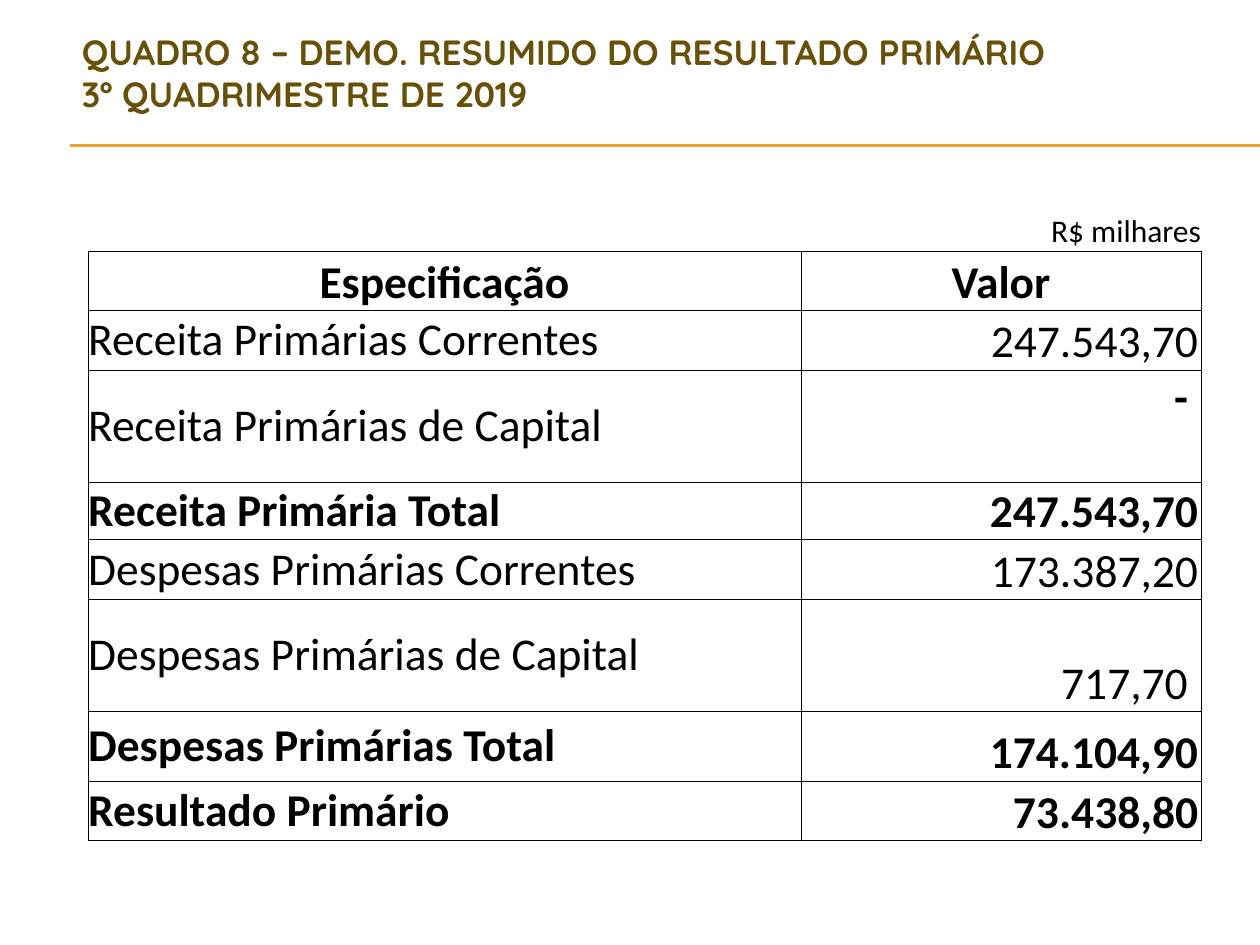
import pptx
import pptx.dml.color
import pptx.enum.shapes
import pptx.enum.text
import pptx.oxml
import pptx.oxml.ns
import pptx.util

Pt = pptx.util.Pt
ALIGN = pptx.enum.text.PP_ALIGN
ANCHOR = pptx.enum.text.MSO_ANCHOR

THEME = {
    "title": "695008", "rule": "F0A22E", "ink": "000000",
    "title_font": "Quicksand", "table_font": "Calibri",
    "title_size": 20, "unit_size": 18, "table_size": 26,
}


def style_text(frame, font, size, color, bold, align):
    for para in frame.paragraphs:
        para.alignment = align
        for span in para.runs:
            span.font.name = font
            span.font.size = Pt(size)
            span.font.bold = bold
            span.font.color.rgb = pptx.dml.color.RGBColor.from_string(color)


def add_borders(cell, sides):
    properties = cell._tc.get_or_add_tcPr()
    for position, side in enumerate(sides):
        border = pptx.oxml.parse_xml(
            f'<a:ln{side} {pptx.oxml.ns.nsdecls("a")} w="6350"><a:solidFill>'
            f'<a:srgbClr val="{THEME["ink"]}"/></a:solidFill></a:ln{side}>')
        properties.insert(position, border)


deck = pptx.Presentation()
deck.slide_width, deck.slide_height = Pt(720), Pt(540)
page = deck.slides.add_slide(deck.slide_layouts[5])

# Double rule under the title
for y in (82.8, 83.5):
    rule = page.shapes.add_connector(
        pptx.enum.shapes.MSO_CONNECTOR.STRAIGHT, Pt(40.3), Pt(y), Pt(720), Pt(y))
    rule.line.color.rgb = pptx.dml.color.RGBColor.from_string(THEME["rule"])
    rule.line.width = Pt(0.75)
    rule._element.spPr.append(
        pptx.oxml.parse_xml(f'<a:effectLst {pptx.oxml.ns.nsdecls("a")}/>'))

# Title
title = page.shapes.title
title.left, title.top, title.width, title.height = Pt(39.6), Pt(0), Pt(644.4), Pt(82.8)
title.text_frame.text = ("QUADRO 8 – DEMO. RESUMIDO DO RESULTADO PRIMÁRIO\v"
                         "3º QUADRIMESTRE DE 2019")
title.text_frame.auto_size = pptx.enum.text.MSO_AUTO_SIZE.NONE
title.text_frame.vertical_anchor = ANCHOR.MIDDLE
style_text(title.text_frame, THEME["title_font"], THEME["title_size"],
           THEME["title"], True, ALIGN.LEFT)

# Rows: label, value, height, bold, value anchor, right inset of the value
rows = [
    ("", "R$ milhares", 59, False, ANCHOR.BOTTOM, 0),
    ("Especificação", "Valor", 34, True, ANCHOR.BOTTOM, 0),
    ("Receita Primárias Correntes", "247.543,70", 34, False, ANCHOR.BOTTOM, 1.5),
    ("Receita Primárias de Capital", "-", 64, False, ANCHOR.TOP, 7.5),
    ("Receita Primária Total", "247.543,70", 33, True, ANCHOR.BOTTOM, 1.5),
    ("Despesas Primárias Correntes", "173.387,20", 34, False, ANCHOR.BOTTOM, 1.5),
    ("Despesas Primárias de Capital", "717,70", 64, False, ANCHOR.BOTTOM, 7.5),
    ("Despesas Primárias Total", "174.104,90", 40, True, ANCHOR.BOTTOM, 1.5),
    ("Resultado Primário", "73.438,80", 34, True, ANCHOR.BOTTOM, 1.5),
]
widths = [185.8, 109.4, 109.4, 2.9, 228.5]
last = len(widths) - 1

# Table
table = page.shapes.add_table(
    len(rows), len(widths), Pt(50.4), Pt(84.5),
    Pt(sum(widths)), Pt(sum(row[2] for row in rows))).table
table.first_row = table.horz_banding = False
for column, width in zip(table.columns, widths):
    column.width = Pt(width)

for index, (label, value, height, bold, anchor, inset) in enumerate(rows):
    table.rows[index].height = Pt(height)
    for cell in table.rows[index].cells:
        cell.fill.background()
        cell.margin_left = cell.margin_right = cell.margin_top = cell.margin_bottom = 0
        add_borders(cell, "LRTB" if index else "B")
    name_cell, value_cell = table.cell(index, 0), table.cell(index, last)
    if index:
        name_cell.merge(table.cell(index, last - 1))
    is_header = index == 1
    name_cell.text_frame.text = label
    name_cell.vertical_anchor = ANCHOR.BOTTOM if is_header else ANCHOR.MIDDLE
    value_cell.text_frame.text = value
    value_cell.vertical_anchor = anchor
    value_cell.margin_right = Pt(inset)
    style_text(name_cell.text_frame, THEME["table_font"], THEME["table_size"],
               THEME["ink"], bold, ALIGN.CENTER if is_header else ALIGN.LEFT)
    style_text(value_cell.text_frame, THEME["table_font"],
               THEME["table_size"] if index else THEME["unit_size"],
               THEME["ink"], bold or value == "-",
               ALIGN.CENTER if is_header else ALIGN.RIGHT)

deck.save("out.pptx")
